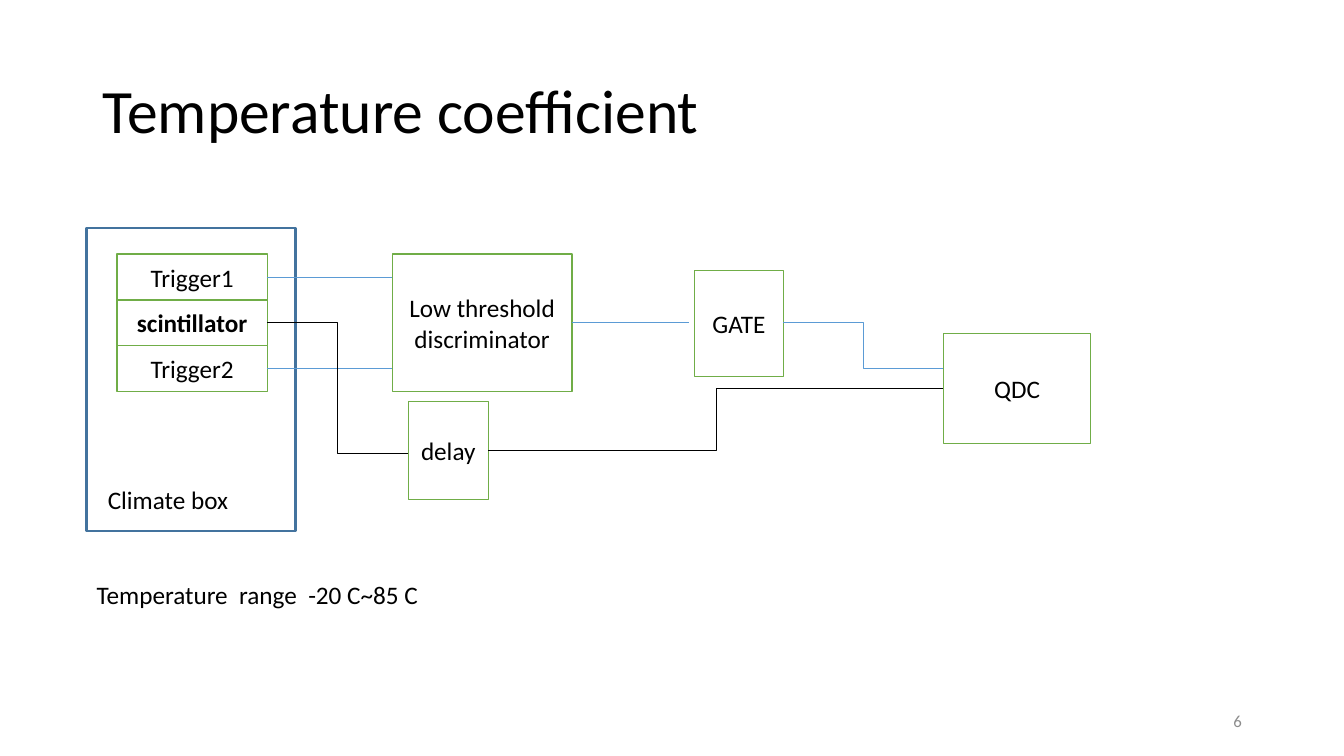
from lxml import etree
from pptx import Presentation
from pptx.dml.color import RGBColor
from pptx.enum.shapes import MSO_CONNECTOR, MSO_SHAPE
from pptx.enum.text import MSO_ANCHOR, PP_ALIGN
from pptx.oxml.ns import qn
from pptx.util import Inches, Pt

RECTANGLE = MSO_SHAPE.RECTANGLE
STRAIGHT, ELBOW = MSO_CONNECTOR.STRAIGHT, MSO_CONNECTOR.ELBOW
TOP, MIDDLE = MSO_ANCHOR.TOP, MSO_ANCHOR.MIDDLE
LEFT, CENTER, RIGHT = PP_ALIGN.LEFT, PP_ALIGN.CENTER, PP_ALIGN.RIGHT

WIDTH, HEIGHT = Inches(13.33), Inches(7.5)
FONT = "Calibri"
BLACK, WHITE, GRAY = "000000", "FFFFFF", "8C8C8C"
GREEN, BLUE, DARK_BLUE = "70AD47", "5B9BD5", "43739E"

# All places and sizes are percentages of the slide's width and height.
DETECTORS = ("Trigger1", "scintillator", "Trigger2")
DETECTOR_LEFT, DETECTOR_WIDTH = 8.7, 11.2
DETECTOR_RIGHT = DETECTOR_LEFT + DETECTOR_WIDTH
STACK_TOP, ROW = 33.6, 6.07
LANES = [STACK_TOP + (row + 0.5) * ROW for row in range(len(DETECTORS))]

DISCRIMINATOR = (29.2, STACK_TOP, 13.35, len(DETECTORS) * ROW)
DELAY = (30.38, 53.07, 5.95, 12.97)
GATE = (51.68, 35.75, 6.6, 14.1)
QDC = (70.2, 44.15, 10.95, 14.55)


def color(value):
    return RGBColor.from_string(value)


def across(share):
    return round(WIDTH * share / 100)


def down(share):
    return round(HEIGHT * share / 100)


def frame(place):
    left, top, width, height = place
    return across(left), down(top), across(width), down(height)


def right_of(place):
    return place[0] + place[2]


def middle_of(place):
    return place[1] + place[3] / 2


def write(shape, text, size=18, ink=BLACK, align=LEFT, anchor=TOP, bold=False):
    text_frame = shape.text_frame
    text_frame.word_wrap = True
    text_frame.vertical_anchor = anchor
    para = text_frame.paragraphs[0]
    para.text = text
    para.alignment = align
    font = para.runs[0].font
    font.name, font.size, font.bold = FONT, Pt(size), bold
    font.color.rgb = color(ink)
    return para


def add_label(page, place, text, **style):
    return write(page.shapes.add_textbox(*frame(place)), text, **style)


def add_box(page, place, line=GREEN, weight=1):
    box = page.shapes.add_shape(RECTANGLE, *frame(place))
    box.shadow.inherit = False
    box.fill.solid()
    box.fill.fore_color.rgb = color(WHITE)
    box.line.color.rgb = color(line)
    box.line.width = Pt(weight)
    return box


def add_block(page, place, text, bold=False):
    """Add a green box with a centred caption."""
    write(add_box(page, place), text, align=CENTER, anchor=MIDDLE, bold=bold)


def add_wire(page, start, end, ink=BLUE, kind=STRAIGHT):
    wire = page.shapes.add_connector(
        kind, across(start[0]), down(start[1]), across(end[0]), down(end[1]))
    wire.line.color.rgb = color(ink)
    wire.line.width = Pt(0.5)
    etree.SubElement(wire._element.spPr, qn("a:effectLst"))


def add_blocks(page):
    add_box(page, (6.45, 30.13, 15.53, 40.13), DARK_BLUE, 1.75)
    for row, name in enumerate(DETECTORS):
        place = (DETECTOR_LEFT, STACK_TOP + row * ROW, DETECTOR_WIDTH, ROW)
        add_block(page, place, name, bold=name == "scintillator")
    add_block(page, DISCRIMINATOR, "Low threshold discriminator")
    add_block(page, DELAY, "delay")
    add_block(page, GATE, "GATE")
    add_block(page, QDC, "QDC")


def add_wires(page):
    first, center, last = LANES
    for lane in (first, last):
        add_wire(page, (DETECTOR_RIGHT, lane), (DISCRIMINATOR[0], lane))
    add_wire(page, (right_of(DISCRIMINATOR), center), (51.3, center))
    add_wire(page, (right_of(GATE), center), (QDC[0], last), kind=ELBOW)
    add_wire(page, (DETECTOR_RIGHT, center), (DELAY[0], 60), BLACK, ELBOW)
    add_wire(page, (right_of(DELAY), middle_of(DELAY)),
             (QDC[0], middle_of(QDC)), BLACK, ELBOW)


def main():
    deck = Presentation()
    deck.slide_width, deck.slide_height = WIDTH, HEIGHT
    page = deck.slides.add_slide(deck.slide_layouts[6])
    title = add_label(page, (6.9, 5.33, 86.25, 19.33),
                      "Temperature coefficient", size=44, anchor=MIDDLE)
    title.line_spacing = 0.9
    add_blocks(page)
    add_wires(page)
    add_label(page, (7.28, 63.47, 12.68, 5.33), "Climate box")
    add_label(page, (6.45, 76, 34.8, 5.33), "Temperature  range  -20 C~85 C")
    add_label(page, (70.65, 92.67, 22.5, 5.33), "6",
              size=12, ink=GRAY, align=RIGHT, anchor=MIDDLE)
    deck.save("out.pptx")


if __name__ == "__main__":
    main()
